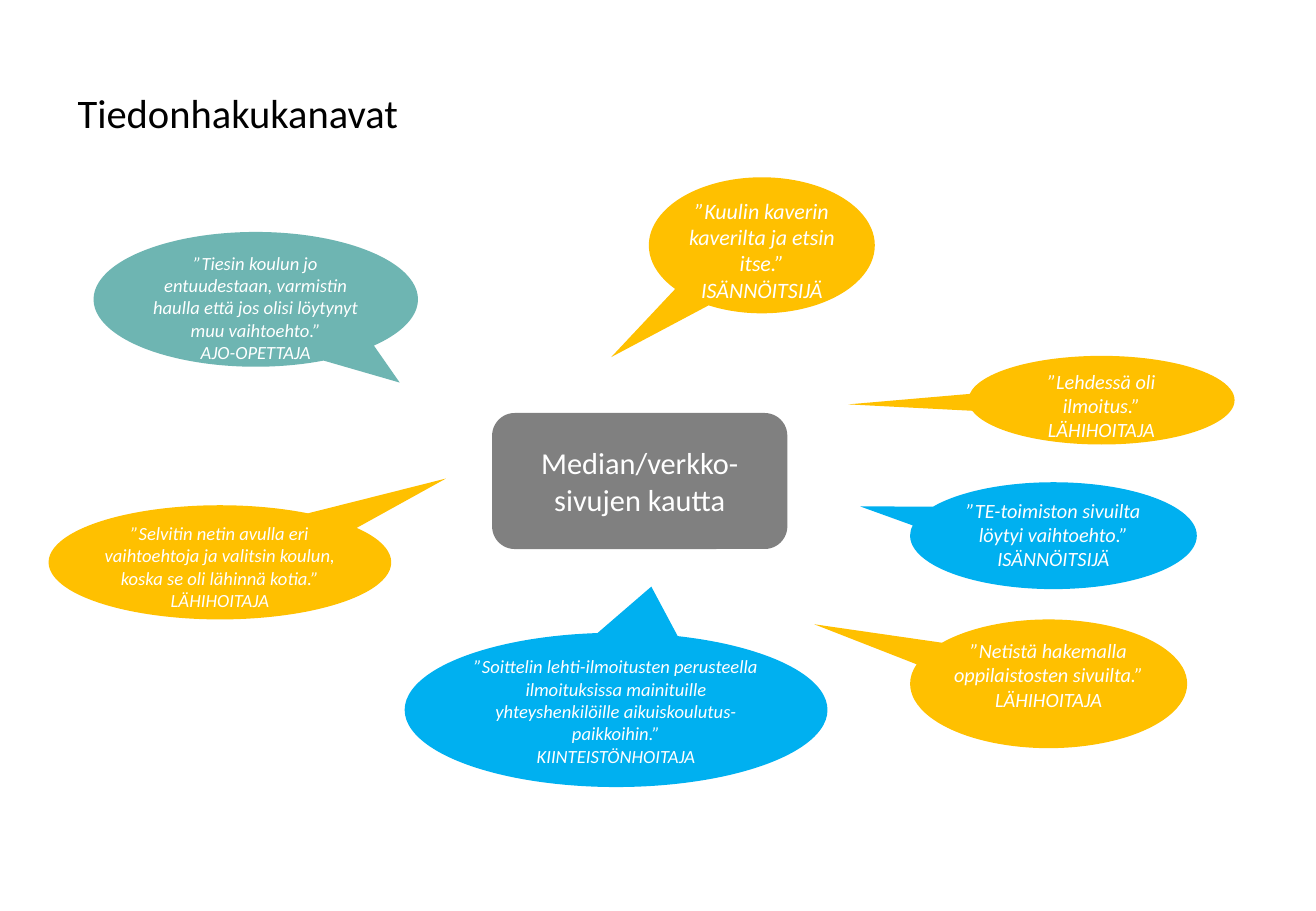
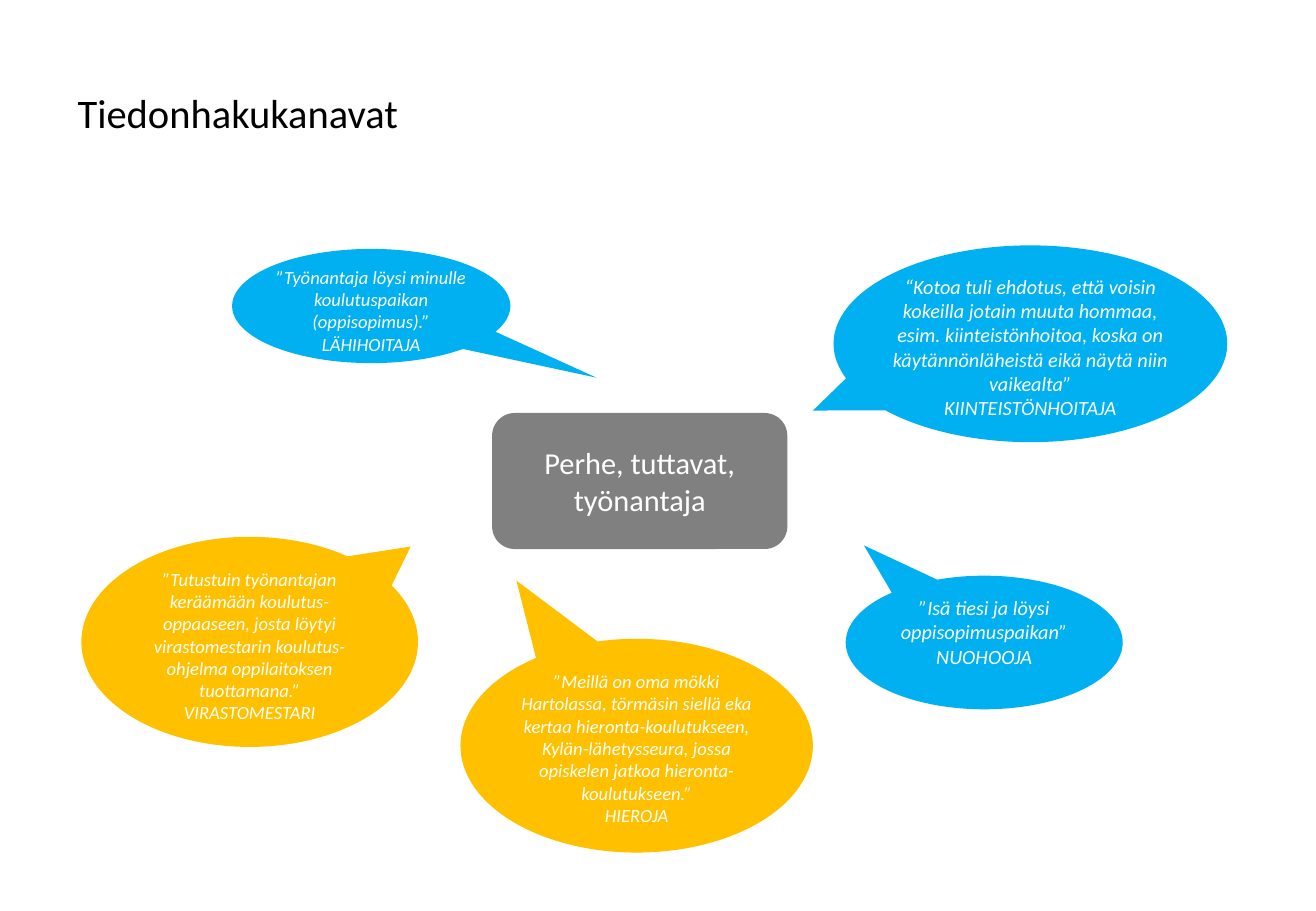
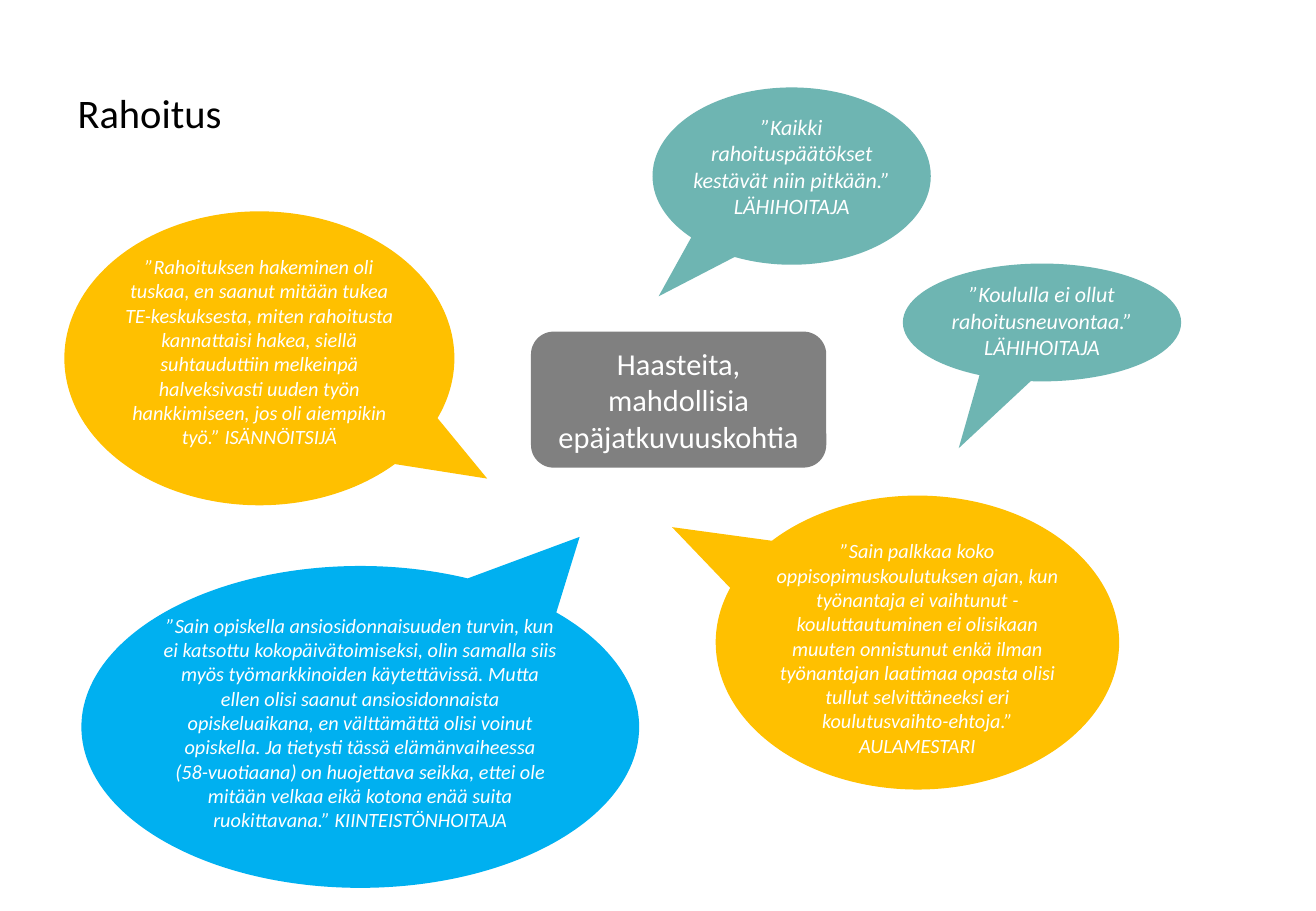
"""Build three slides of quotes in speech bubbles around a central theme."""
from pptx import Presentation
from pptx.dml.color import RGBColor
from pptx.enum.shapes import MSO_SHAPE
from pptx.enum.text import MSO_ANCHOR, PP_ALIGN
from pptx.util import Emu, Pt

PX = 9144
FONT = "Calibri"
COLOURS = {
    "title": "000000",
    "label": "FFFFFF",
    "theme": "808080",
    "yellow": "FFC000",
    "blue": "00B0F0",
    "teal": "6EB5B2",
}
TITLE_BOX = (54, 30, 975, 125)
THEME_SIZE = (243, 112)

SLIDES = [
    ("Tiedonhakukanavat", (405, 340), "Median/verkko-sivujen kautta", [
        ("yellow", (534, 146, 186, 112), (503, 294), 13,
         "”Kuulin kaverin kaverilta ja etsin itse.”\nISÄNNÖITSIJÄ"),
        ("blue", (333, 521, 348, 127), (536, 483), 11,
         "”Soittelin lehti-ilmoitusten perusteella ilmoituksissa mainituille "
         "yhteyshenkilöille aikuiskoulutus-paikkoihin.”\nKIINTEISTÖNHOITAJA"),
        ("blue", (749, 397, 236, 88), (708, 417), 12,
         "”TE-toimiston sivuilta löytyi vaihtoehto.”\nISÄNNÖITSIJÄ"),
        ("teal", (77, 191, 267, 111), (329, 315), 11,
         "”Tiesin koulun jo entuudestaan, varmistin haulla että jos olisi "
         "löytynyt muu vaihtoehto.”\nAJO-OPETTAJA"),
        ("yellow", (797, 293, 219, 73), (698, 333), 12,
         "”Lehdessä oli ilmoitus.”\nLÄHIHOITAJA"),
        ("yellow", (40, 416, 282, 94), (367, 394), 11,
         "”Selvitin netin avulla eri vaihtoehtoja ja valitsin koulun, "
         "koska se oli lähinnä kotia.”\nLÄHIHOITAJA"),
        ("yellow", (749, 510, 228, 106), (670, 514), 12,
         "”Netistä hakemalla oppilaistosten sivuilta.” LÄHIHOITAJA"),
    ]),
    ("Tiedonhakukanavat", (405, 340), "Perhe, tuttavat, työnantaja", [
        ("blue", (191, 205, 229, 94), (491, 311), 11,
         "”Työnantaja löysi minulle koulutuspaikan (oppisopimus).”\n"
         "LÄHIHOITAJA"),
        ("blue", (686, 202, 324, 162), (669, 338), 12,
         "“Kotoa tuli ehdotus, että voisin kokeilla jotain muuta hommaa, "
         "esim. kiinteistönhoitoa, koska on käytännönläheistä eikä näytä "
         "niin vaikealta”\nKIINTEISTÖNHOITAJA"),
        ("yellow", (379, 526, 290, 176), (425, 478), 11,
         "”Meillä on oma mökki Hartolassa, törmäsin siellä eka kertaa "
         "hieronta-koulutukseen, Kylän-lähetysseura, jossa opiskelen jatkoa "
         "hieronta-koulutukseen.”\nHIEROJA"),
        ("blue", (696, 474, 228, 110), (711, 449), 12,
         "”Isä tiesi ja löysi oppisopimuspaikan”\nNUOHOOJA"),
        ("yellow", (67, 442, 277, 173), (338, 450), 11,
         "”Tutustuin työnantajan keräämään koulutus-oppaaseen, josta löytyi "
         "virastomestarin koulutus-ohjelma oppilaitoksen tuottamana.”\n"
         "VIRASTOMESTARI"),
    ]),
    ("Rahoitus", (437, 273), "Haasteita,\nmahdollisia epäjatkuvuuskohtia", [
        ("teal", (743, 217, 229, 97), (789, 369), 13,
         "”Koululla ei ollut rahoitusneuvontaa.”\nLÄHIHOITAJA"),
        ("blue", (67, 466, 459, 265), (477, 442), 12,
         "”Sain opiskella ansiosidonnaisuuden turvin, kun ei katsottu "
         "kokopäivätoimiseksi, olin samalla siis myös työmarkkinoiden "
         "käytettävissä. Mutta ellen olisi saanut ansiosidonnaista "
         "opiskeluaikana, en välttämättä olisi voinut opiskella. Ja tietysti "
         "tässä elämänvaiheessa\v(58-vuotiaana) on huojettava seikka, ettei "
         "ole mitään velkaa eikä kotona enää suita ruokittavana.” "
         "KIINTEISTÖNHOITAJA"),
        ("yellow", (53, 174, 321, 242), (401, 394), 12,
         "”Rahoituksen hakeminen oli tuskaa, en saanut mitään tukea "
         "TE-keskuksesta, miten rahoitusta kannattaisi hakea, siellä "
         "suhtauduttiin melkeinpä halveksivasti uuden työn hankkimiseen, "
         "jos oli aiempikin työ.” ISÄNNÖITSIJÄ"),
        ("yellow", (589, 408, 332, 242), (553, 434), 12,
         "”Sain palkkaa koko oppisopimuskoulutuksen ajan, kun työnantaja ei "
         "vaihtunut - kouluttautuminen ei olisikaan muuten onnistunut enkä "
         "ilman työnantajan laatimaa opasta olisi tullut selvittäneeksi eri "
         "koulutusvaihto-ehtoja.”\nAULAMESTARI"),
        ("teal", (537, 72, 229, 146), (542, 244), 13,
         "”Kaikki rahoituspäätökset kestävät niin pitkään.”\nLÄHIHOITAJA"),
    ]),
]


def px(*lengths):
    return [Emu(length * PX) for length in lengths]


def colour(name):
    return RGBColor.from_string(COLOURS[name])


def write(frame, text, size, ink, align, anchor, italic=False):
    frame.word_wrap = True
    frame.vertical_anchor = anchor
    frame.text = text
    for paragraph in frame.paragraphs:
        paragraph.alignment = align
        for run in paragraph.runs:
            run.font.name = FONT
            run.font.size = Pt(size)
            run.font.italic = italic
            run.font.color.rgb = colour(ink)


def add_filled(slide, preset, box, fill):
    figure = slide.shapes.add_shape(preset, *px(*box))
    figure.shadow.inherit = False
    figure.fill.solid()
    figure.fill.fore_color.rgb = colour(fill)
    figure.line.fill.background()
    return figure


def add_title(slide, text):
    heading = slide.shapes.add_textbox(*px(*TITLE_BOX))
    write(heading.text_frame, text, 24, "title", PP_ALIGN.LEFT, MSO_ANCHOR.MIDDLE)


def add_theme(slide, corner, text):
    theme = add_filled(slide, MSO_SHAPE.ROUNDED_RECTANGLE, corner + THEME_SIZE, "theme")
    write(theme.text_frame, text, 18, "label", PP_ALIGN.CENTER, MSO_ANCHOR.MIDDLE)


def add_quote(slide, fill, box, tip, size, text):
    left, top, width, height = box
    bubble = add_filled(slide, MSO_SHAPE.OVAL_CALLOUT, box, fill)
    bubble.adjustments[0] = (tip[0] - left) / width - 0.5
    bubble.adjustments[1] = (tip[1] - top) / height - 0.5
    frame = bubble.text_frame
    frame.margin_left = frame.margin_right = 0
    frame.margin_top = frame.margin_bottom = 0
    write(frame, text, size, "label", PP_ALIGN.CENTER, MSO_ANCHOR.TOP, italic=True)


def main():
    deck = Presentation()
    deck.slide_width, deck.slide_height = px(1083, 750)
    for title, corner, theme, quotes in SLIDES:
        slide = deck.slides.add_slide(deck.slide_layouts[6])
        add_title(slide, title)
        for quote in quotes:
            add_quote(slide, *quote)
        add_theme(slide, corner, theme)
    deck.save("out.pptx")


if __name__ == "__main__":
    main()
